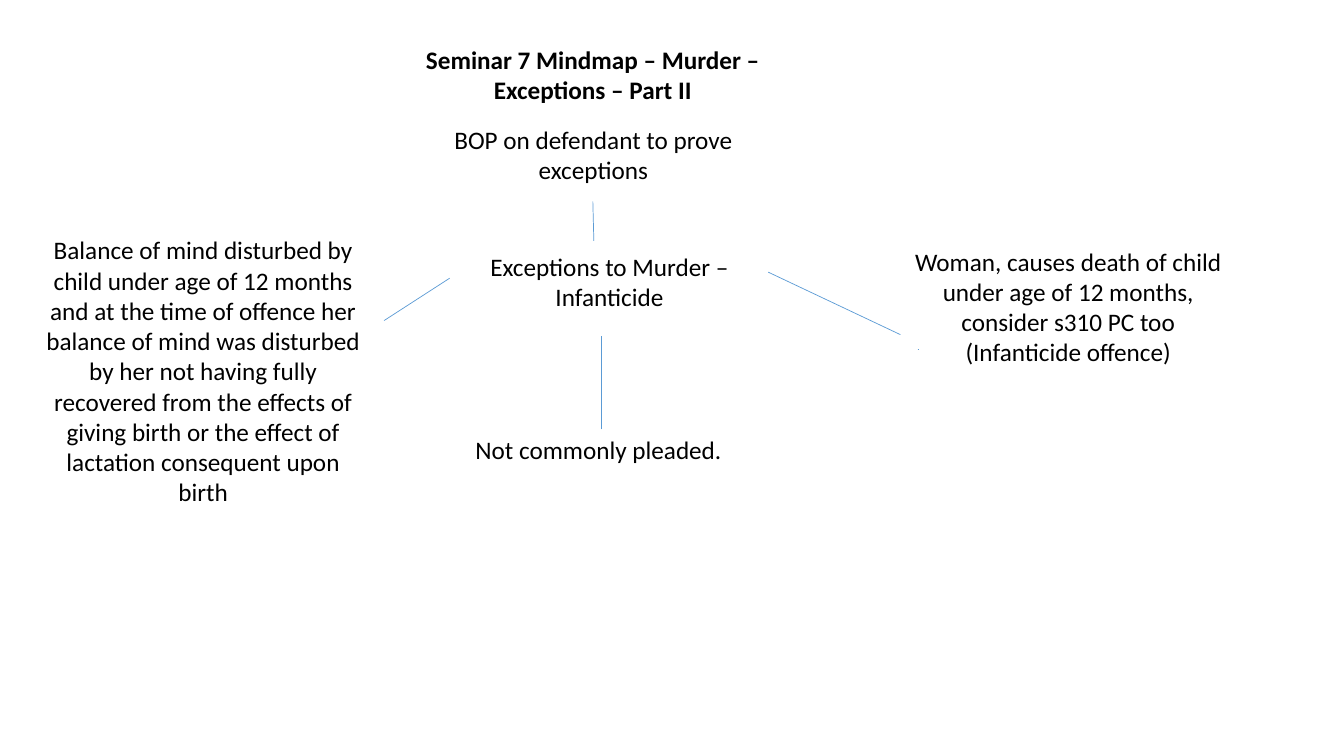
from pptx import Presentation
from pptx.dml.color import RGBColor
from pptx.enum.shapes import MSO_CONNECTOR
from pptx.enum.text import MSO_AUTO_SIZE, PP_ALIGN
from pptx.oxml.ns import qn
from pptx.util import Inches, Pt
from lxml.etree import SubElement

COLORS = {"text": "000000", "link": "5B9BD5"}
FONT = "Calibri"

# text, (left, top, width, height), bold
NOTES = [
    ("Seminar 7 Mindmap – Murder – Exceptions – Part II", (4, 0.39, 3.76, 0.71), True),
    ("BOP on defendant to prove exceptions", (4.22, 1.18, 3.33, 0.71), False),
    ("Exceptions to Murder – Infanticide", (4.38, 2.44, 3.33, 0.71), False),
    ("Balance of mind disturbed by child under age of 12 months and at the time "
     "of offence her balance of mind was disturbed by her not having fully "
     "recovered from the effects of giving birth or the effect of lactation "
     "consequent upon birth", (0.35, 2.28, 3.33, 2.83), False),
    ("Woman, causes death of child under age of 12 months, consider s310 PC too "
     "(Infanticide offence)", (8.93, 2.39, 3.33, 1.31), False),
    ("Not commonly pleaded. ", (4.3, 4.26, 3.33, 0.4), False),
]

# start x, start y, end x, end y
LINKS = [
    (7.62, 2.7, 8.93, 3.32),
    (5.89, 2.39, 5.88, 2),
    (5.96, 4.26, 5.96, 3.33),
    (9.1, 3.47, 9.11, 3.47),
    (4.46, 2.76, 3.81, 3.18),
]


def add_note(slide, text, place, bold):
    frame = slide.shapes.add_textbox(*map(Inches, place)).text_frame
    frame.word_wrap = True
    frame.auto_size = MSO_AUTO_SIZE.SHAPE_TO_FIT_TEXT
    frame.text = text
    line = frame.paragraphs[0]
    line.alignment = PP_ALIGN.CENTER
    font = line.runs[0].font
    font.name = FONT
    font.size = Pt(18)
    font.bold = bold
    font.color.rgb = RGBColor.from_string(COLORS["text"])


def add_link(slide, ends):
    link = slide.shapes.add_connector(MSO_CONNECTOR.STRAIGHT, *map(Inches, ends))
    link.line.color.rgb = RGBColor.from_string(COLORS["link"])
    link.line.width = Pt(0.5)
    SubElement(link._element.spPr, qn("a:effectLst"))


def main():
    deck = Presentation()
    deck.slide_width = Inches(13.33)
    deck.slide_height = Inches(7.5)
    slide = deck.slides.add_slide(deck.slide_layouts[6])
    for note in NOTES:
        add_note(slide, *note)
    for ends in LINKS:
        add_link(slide, ends)
    deck.save("out.pptx")


if __name__ == "__main__":
    main()
